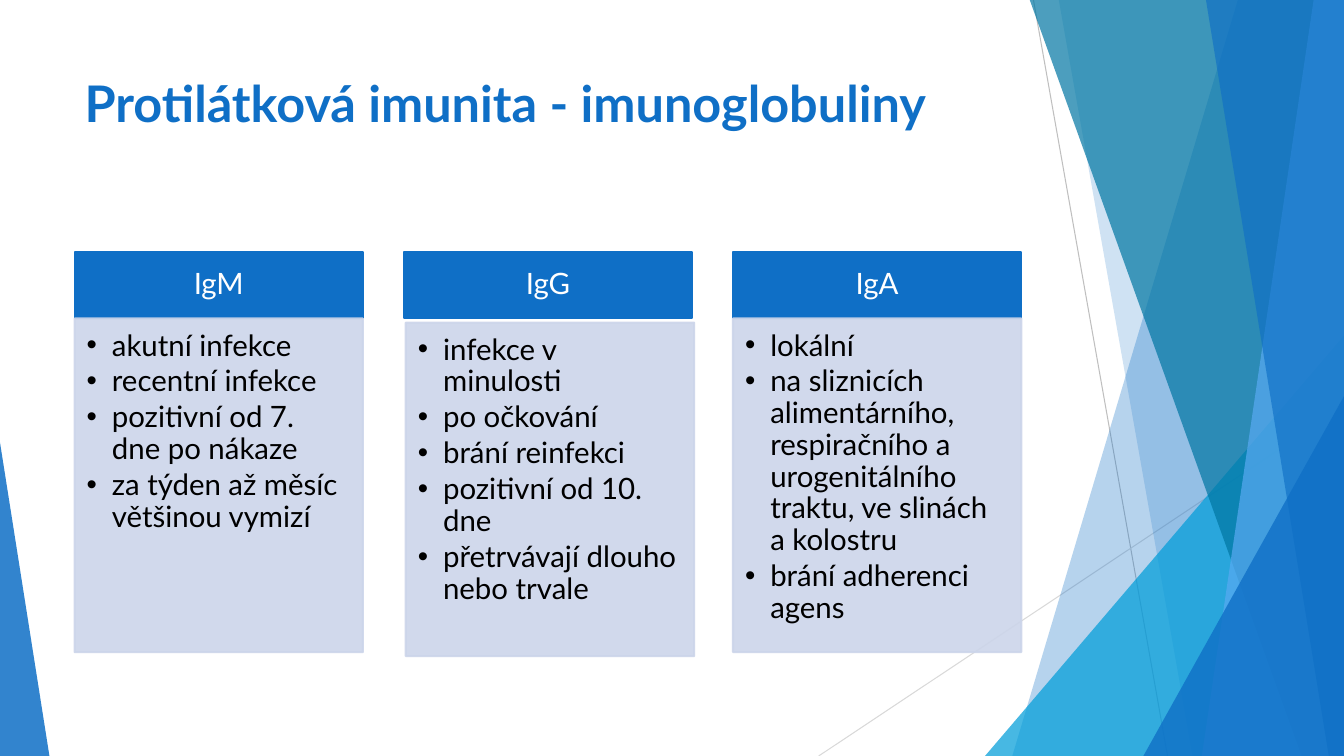
from dataclasses import dataclass
from lxml.etree import SubElement
from pptx import Presentation
from pptx.dml.color import RGBColor
from pptx.enum.shapes import MSO_CONNECTOR, MSO_SHAPE
from pptx.enum.text import MSO_ANCHOR, PP_ALIGN
from pptx.oxml.ns import qn
from pptx.util import Inches, Pt


@dataclass(frozen=True)
class Theme:
    font: str = "Lato"
    blue: str = "0F6FC6"
    cyan: str = "009DD9"
    teal: str = "0076A3"
    sky: str = "59AAF2"
    panel: str = "CCD5EA"
    white: str = "FFFFFF"
    black: str = "000000"
    gray: str = "BFBFBF"
    light_gray: str = "D9D9D9"
    title_size: int = 36
    body_size: int = 21


THEME = Theme()
TOP, RIGHT, BOTTOM = -0.01, 13.33, 7.5
CARD_LEFT, CARD_TOP, CARD_STEP = 0.74, 2.5, 3.265
CARD_WIDTH, HEADER_HEIGHT, PANEL_HEIGHT = 2.86, 0.66, 3.31

CARDS = [
    ("IgM", ["akutní infekce", "recentní infekce", "pozitivní od 7. dne po nákaze",
             "za týden až měsíc většinou vymizí"], (0, 0)),
    ("IgG", ["infekce v minulosti", "po očkování", "brání reinfekci",
             "pozitivní od 10. dne", "přetrvávají dlouho nebo trvale"], (0.02, 0.04)),
    ("IgA", ["lokální",
             "na sliznicích alimentárního, respiračního a urogenitálního traktu, "
             "ve slinách a kolostru",
             "brání adherenci agens"], (0, 0)),
]


def paint(shape, color, opacity=100, outlined=False):
    shape.shadow.inherit = False
    shape.fill.solid()
    shape.fill.fore_color.rgb = RGBColor.from_string(color)
    if outlined:
        shape.line.color.rgb = RGBColor.from_string(color)
        shape.line.width = Pt(1.5)
    else:
        shape.line.fill.background()
    if opacity < 100:
        for tone in shape._element.spPr.iter(qn("a:srgbClr")):
            SubElement(tone, qn("a:alpha"), val=str(opacity * 1000))


def add_hairline(slide, start, end, color):
    hairline = slide.shapes.add_connector(
        MSO_CONNECTOR.STRAIGHT, *(Inches(v) for v in start + end))
    hairline.line.color.rgb = RGBColor.from_string(color)
    hairline.line.width = Pt(0.75)
    SubElement(hairline._element.spPr, qn("a:effectLst"))


def add_band(slide, top_left, top_right, bottom_left, bottom_right, color, opacity):
    corners = [(top_left, TOP), (top_right, TOP), (bottom_right, BOTTOM), (bottom_left, BOTTOM)]
    points = [(Inches(x), Inches(y)) for x, y in corners]
    outline = slide.shapes.build_freeform(*points[0])
    outline.add_line_segments(points[1:], close=True)
    paint(outline.convert_to_shape(), color, opacity)


def add_triangle(slide, left, top, width, apex, color, opacity):
    triangle = slide.shapes.add_shape(
        MSO_SHAPE.ISOSCELES_TRIANGLE, Inches(left), Inches(top),
        Inches(width), Inches(BOTTOM - top))
    triangle.adjustments[0] = apex
    paint(triangle, color, opacity)


def set_margins(frame, left, top, right, bottom):
    frame.margin_left, frame.margin_top = Inches(left), Inches(top)
    frame.margin_right, frame.margin_bottom = Inches(right), Inches(bottom)


def style_runs(paragraph, size, color, bold=False):
    for run in paragraph.runs:
        run.font.name = THEME.font
        run.font.size = Pt(size)
        run.font.bold = bold
        run.font.color.rgb = RGBColor.from_string(color)


def add_title(slide, text):
    title = slide.shapes.add_textbox(Inches(0.74), Inches(0.67), Inches(9.4), Inches(1.44))
    title.text_frame.word_wrap = True
    title.text_frame.text = text
    style_runs(title.text_frame.paragraphs[0], THEME.title_size, THEME.blue, bold=True)


def add_box(slide, left, top, height, color, opacity=100):
    box = slide.shapes.add_shape(
        MSO_SHAPE.RECTANGLE, Inches(left), Inches(top), Inches(CARD_WIDTH), Inches(height))
    paint(box, color, opacity, outlined=True)
    box.text_frame.word_wrap = True
    return box.text_frame


def add_header(slide, left, text):
    header = add_box(slide, left, CARD_TOP, HEADER_HEIGHT, THEME.blue)
    set_margins(header, 0.16, 0.09, 0.16, 0.09)
    header.vertical_anchor = MSO_ANCHOR.MIDDLE
    header.text = text
    label = header.paragraphs[0]
    label.alignment = PP_ALIGN.CENTER
    label.line_spacing = 0.9
    style_runs(label, THEME.body_size, THEME.white)


def add_panel(slide, left, top, items):
    panel = add_box(slide, left, top, PANEL_HEIGHT, THEME.panel, 90)
    set_margins(panel, 0.12, 0.12, 0.16, 0.18)
    panel.vertical_anchor = MSO_ANCHOR.TOP
    panel.text = "\n".join(items)
    for item in panel.paragraphs:
        item.alignment = PP_ALIGN.LEFT
        item.line_spacing = 0.9
        item.space_after = Pt(3)
        properties = item._p.get_or_add_pPr()
        properties.set("marL", str(Inches(0.25)))
        properties.set("indent", str(Inches(-0.25)))
        SubElement(properties, qn("a:buFont"), typeface="Arial")
        SubElement(properties, qn("a:buChar"), char="•")
        style_runs(item, THEME.body_size, THEME.black)


def add_backdrop(slide):
    add_hairline(slide, (10.25, 0), (11.58, 7.5), THEME.gray)
    add_hairline(slide, (13.33, 4.03), (8.12, 7.5), THEME.light_gray)
    add_band(slide, 12.28, RIGHT, 10.04, RIGHT, THEME.blue, 30)
    add_band(slide, 10.5, RIGHT, 11.83, RIGHT, THEME.blue, 20)
    add_triangle(slide, 9.77, 3.33, 3.56, 1, THEME.cyan, 72)
    add_band(slide, 10.21, RIGHT, 12.91, RIGHT, THEME.teal, 70)
    add_band(slide, 13.03, RIGHT, 11.92, RIGHT, THEME.sky, 70)
    add_band(slide, 11.96, RIGHT, 13.18, RIGHT, THEME.blue, 65)
    add_triangle(slide, 11.34, 3.93, 1.99, 1, THEME.blue, 80)
    add_triangle(slide, 0, 4.39, 0.49, 0, THEME.blue, 85)


def main():
    deck = Presentation()
    deck.slide_width, deck.slide_height = Inches(13.33), Inches(7.5)
    slide = deck.slides.add_slide(deck.slide_layouts[6])
    add_backdrop(slide)
    add_title(slide, "Protilátková imunita - imunoglobuliny")
    for index, (name, items, (shift_x, shift_y)) in enumerate(CARDS):
        left = CARD_LEFT + index * CARD_STEP
        add_header(slide, left, name)
        add_panel(slide, left + shift_x, CARD_TOP + HEADER_HEIGHT + shift_y, items)
    deck.save("out.pptx")


if __name__ == "__main__":
    main()
